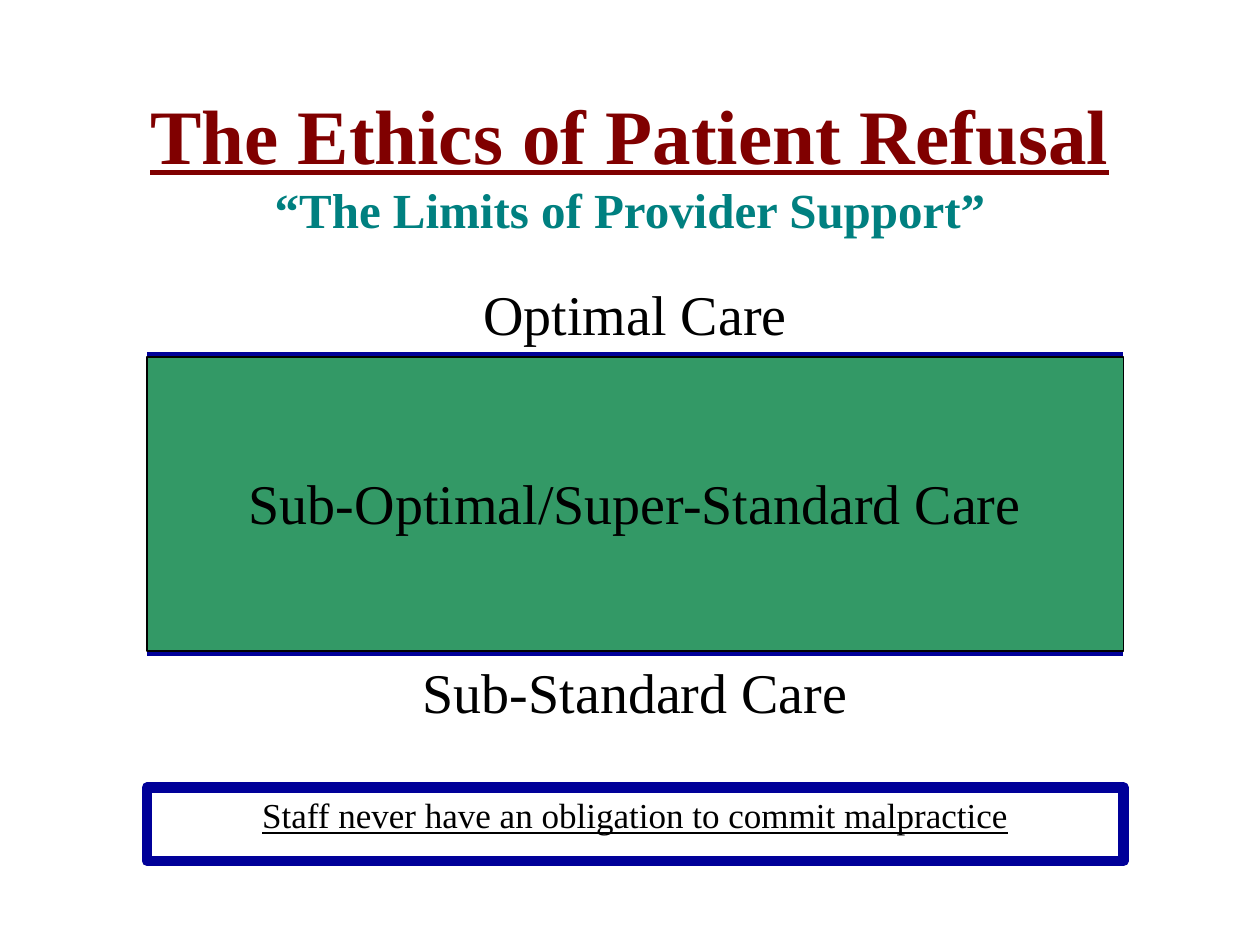
from lxml import etree
from pptx import Presentation
from pptx.dml.color import RGBColor
from pptx.enum.shapes import MSO_CONNECTOR, MSO_SHAPE
from pptx.enum.text import MSO_ANCHOR, PP_ALIGN
from pptx.oxml.ns import qn
from pptx.util import Pt

RECT = MSO_SHAPE.RECTANGLE
LINE = MSO_CONNECTOR.STRAIGHT
CENTER = PP_ALIGN.CENTER
TOP, MIDDLE = MSO_ANCHOR.TOP, MSO_ANCHOR.MIDDLE

FONT = "Times New Roman"
BLACK, NAVY, GREEN = "000000", "000099", "339966"
MAROON, TEAL = "800000", "008080"

LEFT, WIDTH = 112, 744
BAND_TOP, BAND_HIGH = 272, 224
LABEL_TOP, LABEL_STEP, LABEL_HIGH = 208, 144, 60
LABELS = ["Optimal Care", "Sub-Optimal/Super-Standard Care", "Sub-Standard Care"]


def px(n):
    """Turn pixels at 96 to the inch into EMU."""
    return n * 9525


def color(code):
    """Turn a hex string into a colour."""
    return RGBColor.from_string(code)


def add_run(para, text, size, hue=BLACK, bold=False, under=False):
    """Add one styled run to a paragraph."""
    run = para.add_run()
    run.text = text
    font = run.font
    font.name, font.size = FONT, Pt(size)
    font.bold, font.underline = bold, under
    font.color.rgb = color(hue)


def set_frame(shape, anchor=TOP):
    """Wrap a shape's text and return its centred paragraph."""
    frame = shape.text_frame
    frame.word_wrap = True
    frame.vertical_anchor = anchor
    para = frame.paragraphs[0]
    para.alignment = CENTER
    return para


def add_text(slide, x, y, w, h, anchor=TOP):
    """Add a text box and return its paragraph."""
    return set_frame(slide.shapes.add_textbox(px(x), px(y), px(w), px(h)), anchor)


def add_box(slide, y, h, edge, width, fill=None):
    """Add a full-width rectangle, filled or open."""
    box = slide.shapes.add_shape(RECT, px(LEFT), px(y), px(WIDTH), px(h))
    box.shadow.inherit = False
    box.line.color.rgb = color(edge)
    box.line.width = Pt(width)
    if fill:
        box.fill.solid()
        box.fill.fore_color.rgb = color(fill)
    else:
        box.fill.background()
    return box


def add_rule(slide, y):
    """Add a full-width horizontal rule."""
    rule = slide.shapes.add_connector(LINE, px(LEFT), px(y), px(LEFT + WIDTH), px(y))
    rule.line.color.rgb = color(NAVY)
    rule.line.width = Pt(6)
    etree.SubElement(rule._element.spPr, qn("a:effectLst"))


def main():
    """Build the slide and save it."""
    deck = Presentation()
    deck.slide_width, deck.slide_height = px(960), px(720)
    slide = deck.slides.add_slide(deck.slide_layouts[6])

    title = add_text(slide, 72, 64, 816, 120, MIDDLE)
    add_run(title, "The Ethics of Patient Refusal", 44, MAROON, bold=True, under=True)
    title.add_line_break()
    add_run(title, "“The Limits of Provider Support”", 28, TEAL, bold=True)

    note = set_frame(add_box(slide, 600, 56, NAVY, 6))
    add_run(note, "Staff never have an obligation to commit malpractice", 20, under=True)

    for y in (BAND_TOP, BAND_TOP + BAND_HIGH):
        add_rule(slide, y)
    add_box(slide, BAND_TOP, BAND_HIGH, BLACK, 0.75, GREEN)

    for i, label in enumerate(LABELS):
        para = add_text(slide, LEFT, LABEL_TOP + i * LABEL_STEP, WIDTH, LABEL_HIGH)
        add_run(para, label, 32)

    deck.save("out.pptx")


if __name__ == "__main__":
    main()
